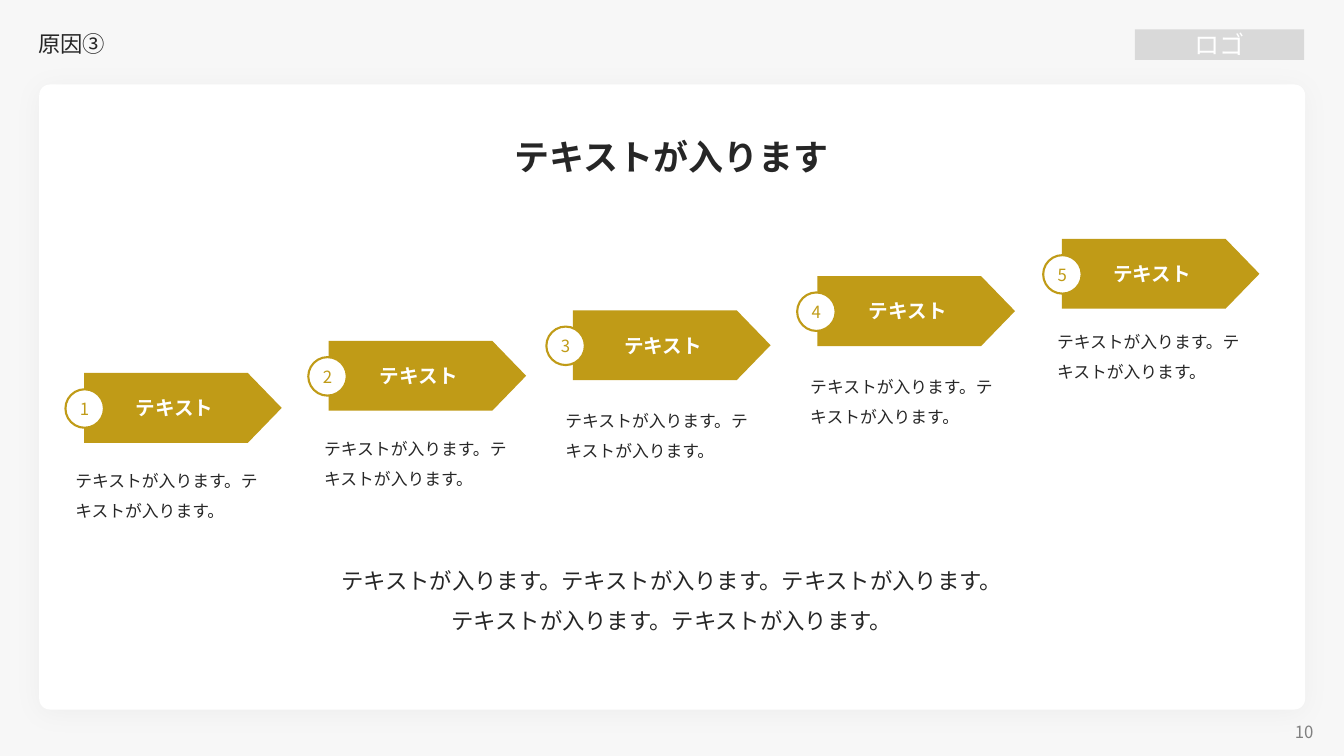
"""Build the slide of five rising steps that explains the third cause."""
from dataclasses import dataclass
from typing import Any

from lxml import etree
from pptx import Presentation
from pptx.dml.color import RGBColor
from pptx.enum.shapes import MSO_SHAPE
from pptx.enum.text import MSO_ANCHOR, MSO_AUTO_SIZE, PP_ALIGN
from pptx.oxml.ns import qn
from pptx.util import Cm, Pt

RECTANGLE = MSO_SHAPE.RECTANGLE
ROUNDED = MSO_SHAPE.ROUNDED_RECTANGLE
PENTAGON = MSO_SHAPE.PENTAGON
OVAL = MSO_SHAPE.OVAL
LEFT, CENTER, RIGHT = PP_ALIGN.LEFT, PP_ALIGN.CENTER, PP_ALIGN.RIGHT
TOP, MIDDLE = MSO_ANCHOR.TOP, MSO_ANCHOR.MIDDLE
NO_AUTOFIT = MSO_AUTO_SIZE.NONE

GOLD = RGBColor(0xC0, 0x9B, 0x17)
INK = RGBColor(0x26, 0x26, 0x26)
WHITE = RGBColor(0xFF, 0xFF, 0xFF)
BACKDROP = RGBColor(0xF7, 0xF7, 0xF7)
LOGO_GRAY = RGBColor(0xD9, 0xD9, 0xD9)
NUMBER_GRAY = RGBColor(0x80, 0x80, 0x80)

FONT = "Noto Sans CJK JP"
LABEL_FONT = "Lato"
LABEL = "テキスト"
SENTENCE = "テキストが入ります。"

FIRST_ARROW_LEFT = 2.12
ARROW_PITCH = 6.16
BADGE_DROP = 0.41


@dataclass(frozen=True)
class Box:
    """Position and size in centimetres."""

    left: float
    top: float
    width: float
    height: float

    def lengths(self) -> tuple[Cm, Cm, Cm, Cm]:
        """Return the four lengths in the order python-pptx takes them."""
        return Cm(self.left), Cm(self.top), Cm(self.width), Cm(self.height)


@dataclass(frozen=True)
class Step:
    """One step: arrow height on the slide, badge and caption places."""

    arrow_top: float
    badge_left: float
    caption_left: float
    caption_top: float


STEPS = (
    Step(9.4, 1.65, 1.65, 11.48),
    Step(8.59, 7.77, 7.92, 10.67),
    Step(7.82, 13.77, 14.0, 9.96),
    Step(6.96, 20.09, 20.17, 9.12),
    Step(6.02, 26.29, 26.39, 7.98),
)


def write_text(shape: Any, text: str, *, size: float, color: RGBColor = INK,
               font: str = FONT, bold: bool = False, align: PP_ALIGN = LEFT,
               anchor: MSO_ANCHOR = TOP, spacing: float = 1.0) -> None:
    """Fill a shape with formatted text, one paragraph per line."""
    frame = shape.text_frame
    frame.text = text
    frame.word_wrap = True
    frame.auto_size = NO_AUTOFIT
    frame.vertical_anchor = anchor
    for paragraph in frame.paragraphs:
        paragraph.alignment = align
        paragraph.line_spacing = spacing
        for run in paragraph.runs:
            run.font.size = Pt(size)
            run.font.bold = bold
            run.font.name = font
            run.font.color.rgb = color
            latin = run.font._element.find(qn("a:latin"))
            east_asian = etree.Element(qn("a:ea"), typeface=FONT)
            latin.addnext(east_asian)


def add_text(shapes: Any, box: Box, text: str, **text_format: Any) -> None:
    """Add a text box."""
    write_text(shapes.add_textbox(*box.lengths()), text, **text_format)


def add_filled(shapes: Any, kind: MSO_SHAPE, box: Box, fill: RGBColor,
               line: RGBColor | None = None) -> Any:
    """Add a flat preset shape with an optional outline."""
    shape = shapes.add_shape(kind, *box.lengths())
    shape.shadow.inherit = False
    shape.fill.solid()
    shape.fill.fore_color.rgb = fill
    if line is None:
        shape.line.fill.background()
    else:
        shape.line.color.rgb = line
        shape.line.width = Pt(1.5)
    return shape


def add_card(shapes: Any) -> None:
    """Add the white content card with its soft shadow."""
    card = add_filled(shapes, ROUNDED, Box(0.99, 2.13, 31.9, 15.75), WHITE)
    card.adjustments[0] = 0.017
    effects = card._element.spPr.find(qn("a:effectLst"))
    shadow = etree.SubElement(
        effects, qn("a:outerShdw"), blurRad=str(Pt(20)), dist=str(Pt(3)),
        dir="5400000", algn="t", rotWithShape="0")
    color = etree.SubElement(shadow, qn("a:srgbClr"), val="000000")
    etree.SubElement(color, qn("a:alpha"), val="3000")


def add_step(shapes: Any, index: int, step: Step) -> None:
    """Add a group of arrow, numbered badge and caption."""
    group = shapes.add_group_shape().shapes
    arrow_left = FIRST_ARROW_LEFT + index * ARROW_PITCH
    arrow = add_filled(group, PENTAGON, Box(arrow_left, step.arrow_top, 4.98, 1.76), GOLD)
    arrow.adjustments[0] = 0.485
    write_text(arrow, LABEL, size=14, color=WHITE, font=LABEL_FONT, bold=True,
               align=CENTER, anchor=MIDDLE)
    badge_box = Box(step.badge_left, step.arrow_top + BADGE_DROP, 0.97, 0.97)
    badge = add_filled(group, OVAL, badge_box, WHITE, GOLD)
    frame = badge.text_frame
    frame.margin_left = frame.margin_right = frame.margin_top = frame.margin_bottom = 0
    write_text(badge, str(index + 1), size=12, color=GOLD, align=CENTER, anchor=MIDDLE)
    add_text(group, Box(step.caption_left, step.caption_top, 5.46, 1.73),
             SENTENCE * 2, size=12, spacing=1.5)


def main() -> None:
    """Create the presentation and save it."""
    presentation = Presentation()
    presentation.slide_width, presentation.slide_height = Cm(33.87), Cm(19.05)
    slide = presentation.slides.add_slide(presentation.slide_layouts[5])
    slide.background.fill.solid()
    slide.background.fill.fore_color.rgb = BACKDROP
    shapes = slide.shapes

    title = shapes.title
    title.left, title.top, title.width, title.height = Box(0.71, 0.63, 25.4, 1.04).lengths()
    write_text(title, "原因③", size=16, anchor=MIDDLE, spacing=0.9)

    add_card(shapes)
    add_text(shapes, Box(25.45, 18.14, 7.9, 0.61), "10", size=12,
             color=NUMBER_GRAY, align=RIGHT, anchor=MIDDLE)
    logo = add_filled(shapes, RECTANGLE, Box(28.6, 0.74, 4.27, 0.77), LOGO_GRAY)
    write_text(logo, "ロゴ", size=18, color=WHITE, align=CENTER, anchor=MIDDLE)

    add_text(shapes, Box(3.02, 3.3, 27.81, 1.32), "テキストが入ります",
             size=25, bold=True, align=CENTER)
    for index, step in enumerate(STEPS):
        add_step(shapes, index, step)
    add_text(shapes, Box(7.26, 13.82, 19.35, 2.21), f"{SENTENCE * 3}\n{SENTENCE * 2}",
             size=16, align=CENTER, spacing=1.5)

    presentation.save("out.pptx")


if __name__ == "__main__":
    main()
